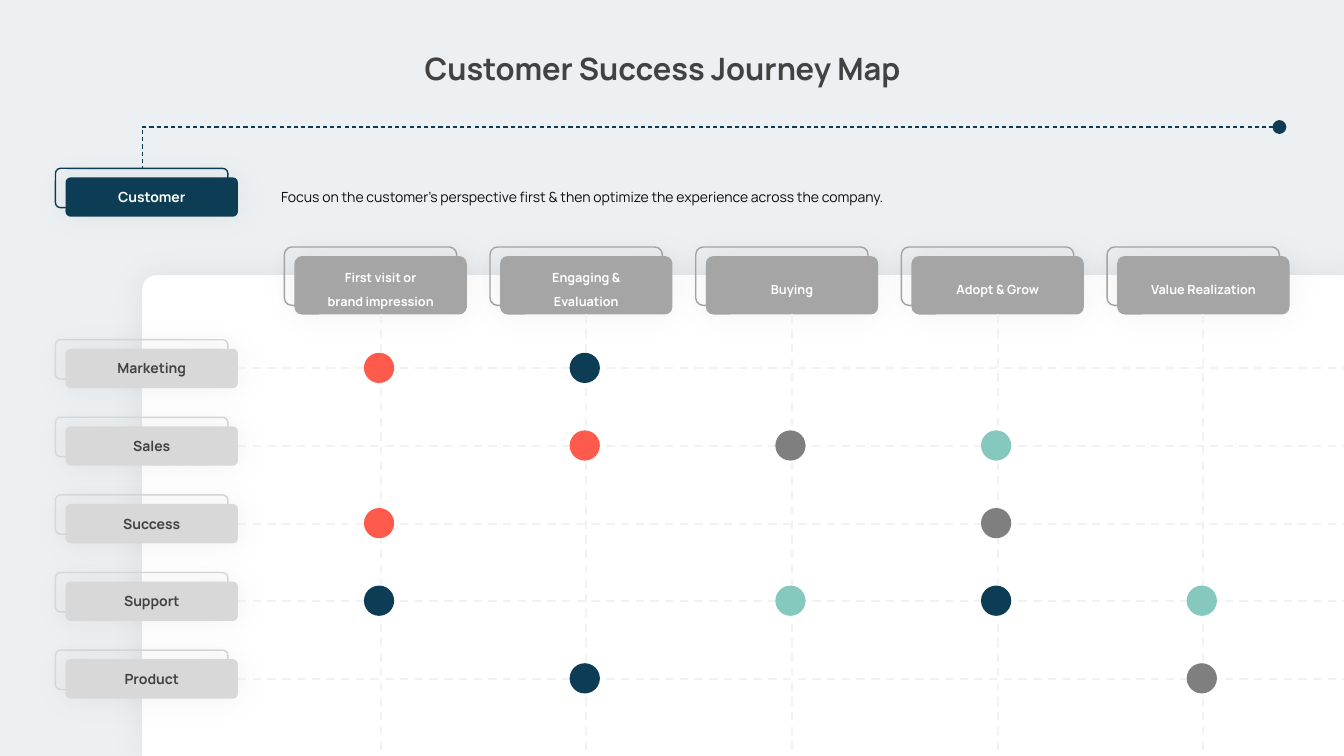
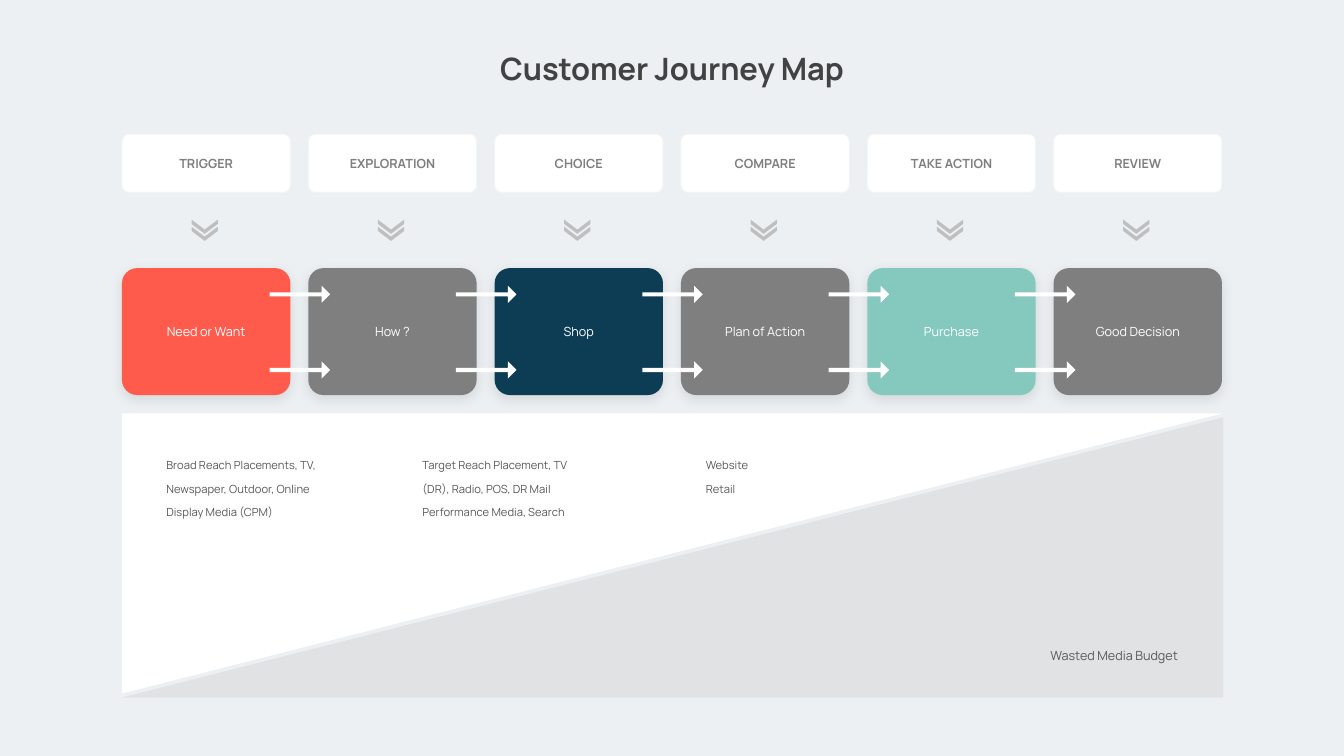
from dataclasses import dataclass

from lxml import etree
from pptx import Presentation
from pptx.dml.color import RGBColor
from pptx.enum.dml import MSO_LINE
from pptx.enum.shapes import MSO_CONNECTOR, MSO_SHAPE
from pptx.enum.text import MSO_ANCHOR, MSO_AUTO_SIZE, PP_ALIGN
from pptx.oxml.ns import qn
from pptx.util import Inches, Pt

ROUND, OVAL, CHEVRON = MSO_SHAPE.ROUNDED_RECTANGLE, MSO_SHAPE.OVAL, MSO_SHAPE.CHEVRON
PANEL, ARROW, TRIANGLE = MSO_SHAPE.ROUND_2_SAME_RECTANGLE, MSO_SHAPE.DOWN_ARROW, MSO_SHAPE.RIGHT_TRIANGLE
STRAIGHT, ELBOW = MSO_CONNECTOR.STRAIGHT, MSO_CONNECTOR.ELBOW
LEFT, CENTER = PP_ALIGN.LEFT, PP_ALIGN.CENTER
DASH, MIDDLE, NO_FIT = MSO_LINE.DASH, MSO_ANCHOR.MIDDLE, MSO_AUTO_SIZE.NONE


@dataclass(frozen=True)
class Theme:
    font: str = "Manrope"
    background: str = "ECF0F2"
    white: str = "FFFFFF"
    navy: str = "0C3D54"
    coral: str = "FF5B4C"
    mint: str = "85C8BD"
    gray: str = "7F7F7F"
    head: str = "A5A5A5"
    chevron: str = "BFBFBF"
    row: str = "D8D8D8"
    grid: str = "F2F2F2"
    border: str = "F4F4F4"
    ink: str = "424242"
    note: str = "595959"
    black: str = "0C0C0C"
    title_size: int = 22
    body_size: int = 10
    label_size: int = 9
    small_size: int = 8
    # Shadows: opacity %, blur pt, distance pt, direction in degrees
    soft: tuple = (5, 23, 0, 0)
    drop: tuple = (9, 9, 3, 90)


T = Theme()


def write(tf, lines, size, color, bold=False, align=CENTER, spacing=None, inset=(0.1, 0.05)):
    """Fill a text frame, one paragraph per line."""
    tf.word_wrap = True
    tf.margin_left = tf.margin_right = Inches(inset[0])
    tf.margin_top = tf.margin_bottom = Inches(inset[1])
    for i, line in enumerate(lines):
        p = tf.paragraphs[0] if i == 0 else tf.add_paragraph()
        p.alignment = align
        if spacing:
            p.line_spacing = spacing
        r = p.add_run()
        r.text = line
        for name, value in {"name": T.font, "size": Pt(size), "bold": bold}.items():
            setattr(r.font, name, value)
        r.font.color.rgb = RGBColor.from_string(color)


def add_box(s, kind, at, fill=None, line=None, adj=(), shadow=None, rotation=0):
    """Add a preset shape; line is (colour, points)."""
    sp = s.shapes.add_shape(kind, *map(Inches, at))
    sp.rotation = rotation
    for i, value in enumerate(adj):
        sp.adjustments[i] = value
    if fill:
        sp.fill.solid()
        sp.fill.fore_color.rgb = RGBColor.from_string(fill)
    else:
        sp.fill.background()
    if line:
        sp.line.color.rgb = RGBColor.from_string(line[0])
        sp.line.width = Pt(line[1])
    else:
        sp.line.fill.background()
    sp.shadow.inherit = False
    if shadow:
        alpha, blur, dist, angle = shadow
        effects = sp._element.spPr.find(qn("a:effectLst"))
        outer = etree.SubElement(effects, qn("a:outerShdw"), blurRad=str(Pt(blur)),
                                 dist=str(Pt(dist)), dir=str(angle * 60000), algn="ctr", rotWithShape="0")
        black = etree.SubElement(outer, qn("a:srgbClr"), val="000000")
        etree.SubElement(black, qn("a:alpha"), val=str(alpha * 1000))
    return sp


prs = Presentation()
prs.slide_width, prs.slide_height = Inches(13.33), Inches(7.5)

# Shared background and titles
fill = prs.slide_master.background.fill
fill.solid()
fill.fore_color.rgb = RGBColor.from_string(T.background)
slides = []
for title, left, width in [("Customer Success Journey Map", 3.82, 5.5), ("Customer Journey Map", 4.26, 4.81)]:
    s = prs.slides.add_slide(prs.slide_layouts[5])
    sp = s.shapes.title
    sp.left, sp.top, sp.width, sp.height = map(Inches, (left, 0.39, width, 0.58))
    sp.text_frame.auto_size = NO_FIT
    sp.text_frame.vertical_anchor = MIDDLE
    write(sp.text_frame, [title], T.title_size, T.ink, bold=True)
    slides.append(s)

# Slide 1: white panel
s = slides[0]
add_box(s, PANEL, (1.41, 2.73, 12.16, 4.77), T.white, adj=(0.03, 0), shadow=T.soft)

# Labels, each a filled box over an offset outline
row_step, column_step = 0.77, 2.04
rows = ["Marketing", "Sales", "Success", "Support", "Product"]
heads = [["First visit or", "brand impression"], ["Engaging &", "Evaluation"],
         ["Buying"], ["Adopt & Grow"], ["Value Realization"]]
row_format = {"size": T.body_size, "bold": True}
head_format = {"size": T.label_size, "bold": True, "color": T.white, "spacing": 1.56}
labels = [([name], 0.55, 3.37 + row_step * i, 0.39, T.row, {**row_format, "color": T.ink}, "row")
          for i, name in enumerate(rows)]
labels.append((["Customer"], 0.55, 1.67, 0.39, T.navy, {**row_format, "color": T.white}, None))
labels += [(lines, 2.82 + column_step * i, 2.45, 0.58, T.head, head_format, "column")
           for i, lines in enumerate(heads)]
grid_starts = []
for lines, x, y, height, color, text_format, axis in labels:
    add_box(s, ROUND, (x, y, 1.71, height), line=(color, 1), adj=(0.13,), shadow=T.soft)
    sp = add_box(s, ROUND, (x + 0.1, y + 0.09, 1.71, height), color, adj=(0.13,), shadow=T.soft)
    write(sp.text_frame, lines, **text_format)
    if axis:
        grid_starts.append((sp, axis))

# Dashed grid, and the route from the customer label to the last stage
lines = []
for sp, axis in grid_starts:
    if axis == "row":
        y = sp.top + sp.height // 2
        c = s.shapes.add_connector(STRAIGHT, sp.left + sp.width, y, prs.slide_width, y)
        c.begin_connect(sp, 3)
    else:
        x = sp.left + sp.width // 2
        c = s.shapes.add_connector(STRAIGHT, x, sp.top + sp.height, x, prs.slide_height)
        c.begin_connect(sp, 2)
    lines.append((c, T.grid, 1.5))
route = s.shapes.add_connector(ELBOW, *map(Inches, (12.69, 1.26, 1.41, 1.67)))
route._element.spPr.find(qn("a:prstGeom")).set("prst", "bentConnector2")
lines.append((route, T.navy, 0.75))
for c, color, width in lines:
    c.line.color.rgb = RGBColor.from_string(color)
    c.line.width = Pt(width)
    c.line.dash_style = DASH
    etree.SubElement(c._element.spPr, qn("a:effectLst"))
etree.SubElement(route._element.spPr.find(qn("a:ln")), qn("a:headEnd"), type="oval", w="lg", len="lg")

# Dots: colours by row and column
dots = [
    [T.coral, T.navy, None, None, None],
    [None, T.coral, T.gray, T.mint, None],
    [T.coral, None, None, T.gray, None],
    [T.navy, None, T.mint, T.navy, T.mint],
    [None, T.navy, None, None, T.gray],
]
for i, row in enumerate(dots):
    for j, color in enumerate(row):
        if color:
            add_box(s, OVAL, (3.61 + column_step * j, 3.5 + row_step * i, 0.3, 0.3), color)

# Focus statement
sp = s.shapes.add_textbox(*map(Inches, (2.69, 1.82, 6.79, 0.27)))
write(sp.text_frame,
      ["Focus on the customer’s perspective first & then optimize the experience across the company."],
      T.body_size, T.black, align=LEFT)

# Slide 2: stages, chevrons and cards
s = slides[1]
stages = [
    ("TRIGGER", "Need or Want", T.coral),
    ("EXPLORATION", "How ?", T.gray),
    ("CHOICE", "Shop", T.navy),
    ("COMPARE", "Plan of Action", T.gray),
    ("TAKE ACTION", "Purchase", T.mint),
    ("REVIEW", "Good Decision", T.gray),
]
card_width, first_left, last_left = 1.67, 1.21, 10.45
pitch = (last_left - first_left) / (len(stages) - 1)
lefts = [first_left + pitch * i for i in range(len(stages))]
for x, (stage, action, color) in zip(lefts, stages):
    for y in (2.19, 2.12):
        add_box(s, CHEVRON, (x + 0.75, y, 0.14, 0.26), T.chevron, adj=(0.7,), rotation=90)
    sp = add_box(s, ROUND, (x, 2.66, card_width, 1.26), color, adj=(0.12,), shadow=T.drop)
    write(sp.text_frame, [action], T.label_size, T.white, inset=(0.03, 0.03))
    sp = add_box(s, ROUND, (x, 1.33, card_width, 0.58), T.white, (T.border, 0.75), adj=(0.12,))
    write(sp.text_frame, [stage], T.label_size, T.gray, bold=True, inset=(0.03, 0.03))

# Arrows across the gaps between cards
for x in lefts[:-1]:
    for y in (2.62, 3.37):
        add_box(s, ARROW, (x + 1.68, y, 0.17, 0.6), T.white, adj=(0.24, 0.5), rotation=270)

# Media budget wedges
add_box(s, TRIANGLE, (5.28, 0.03, 2.78, 10.92), T.white, rotation=90)
wedge = add_box(s, TRIANGLE, (5.28, 0.07, 2.78, 10.92), T.row, rotation=270)
tint = wedge._element.spPr.find(qn("a:solidFill"))[0]
etree.SubElement(tint, qn("a:alpha"), val="57000")

# Media notes
notes = [
    ((1.65, 4.45, 1.65, 0.57), ["Broad Reach Placements, TV, Newspaper, Outdoor, Online Display Media (CPM)"]),
    ((4.19, 4.45, 1.67, 0.57), ["Target Reach Placement, TV (DR), Radio, POS, DR Mail Performance Media, Search"]),
    ((7, 4.45, 1.41, 0.37), ["Website", "Retail"]),
]
for at, paragraphs in notes:
    sp = s.shapes.add_textbox(*map(Inches, at))
    write(sp.text_frame, paragraphs, T.small_size, T.note, align=LEFT, spacing=1.75, inset=(0, 0))
sp = s.shapes.add_textbox(*map(Inches, (10.35, 6.43, 1.4, 0.15)))
write(sp.text_frame, ["Wasted Media Budget"], T.label_size, T.note, inset=(0, 0))

prs.save("out.pptx")
